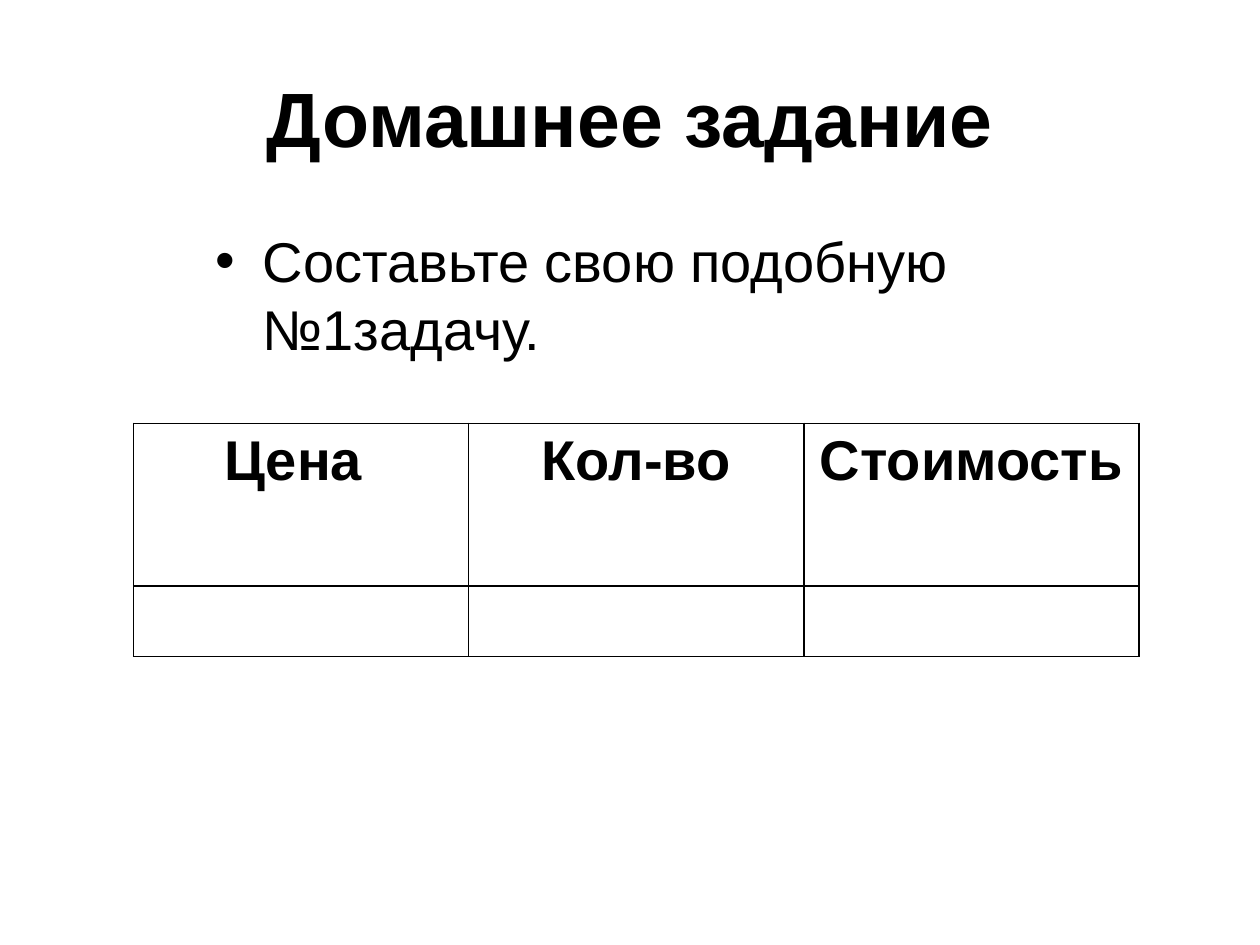
import pptx
import pptx.dml.color
import pptx.enum.text
import pptx.util
from lxml import etree
from pptx.oxml.ns import qn
from pptx.util import Inches

TITLE = "Домашнее задание"
TASK = "Составьте свою подобную №1задачу."
TABLE_ROWS = [("Цена ", "Кол-во", "Стоимость "), ("", "", "")]
ROW_HEIGHTS = (1.29, 0.56)
COLUMN_WIDTH = 2.66
TABLE_LEFT, TABLE_TOP = 1.06, 3.36
THEME = {
    "font": "Arial",
    "ink": "000000",
    "title_size": 44,
    "text_size": 32,
    "border_width": 1,
}
CENTER = pptx.enum.text.PP_ALIGN.CENTER


def place(shape, left, top, width, height):
    shape.left, shape.top = Inches(left), Inches(top)
    shape.width, shape.height = Inches(width), Inches(height)


def style(paragraph, size, bold=False, alignment=None):
    paragraph.alignment = alignment
    paragraph.font.name = THEME["font"]
    paragraph.font.size = pptx.util.Pt(size)
    paragraph.font.bold = bold
    paragraph.font.color.rgb = pptx.dml.color.RGBColor.from_string(THEME["ink"])


def fill_placeholder(shape, text, size, **formatting):
    frame = shape.text_frame
    frame.text = text
    frame.word_wrap = True
    frame.auto_size = pptx.enum.text.MSO_AUTO_SIZE.NONE
    style(frame.paragraphs[0], size, **formatting)


def add_borders(cell):
    properties = cell._tc.get_or_add_tcPr()
    width = str(pptx.util.Pt(THEME["border_width"]))
    for side in ("a:lnL", "a:lnR", "a:lnT", "a:lnB"):
        line = etree.SubElement(properties, qn(side), w=width)
        fill = etree.SubElement(line, qn("a:solidFill"))
        etree.SubElement(fill, qn("a:srgbClr"), val=THEME["ink"])


def add_price_table(slide):
    columns = len(TABLE_ROWS[0])
    table = slide.shapes.add_table(
        len(TABLE_ROWS), columns, Inches(TABLE_LEFT), Inches(TABLE_TOP),
        Inches(COLUMN_WIDTH * columns), Inches(sum(ROW_HEIGHTS))).table
    table.first_row = table.horz_banding = False
    for column in table.columns:
        column.width = Inches(COLUMN_WIDTH)
    for row, height, texts in zip(table.rows, ROW_HEIGHTS, TABLE_ROWS):
        row.height = Inches(height)
        for cell, text in zip(row.cells, texts):
            add_borders(cell)
            cell.fill.background()
            if text:
                cell.text = text
                style(cell.text_frame.paragraphs[0], THEME["text_size"],
                      bold=True, alignment=CENTER)


def main():
    presentation = pptx.Presentation()
    presentation.slide_width, presentation.slide_height = Inches(10), Inches(7.5)
    slide = presentation.slides.add_slide(presentation.slide_layouts[1])

    title = slide.shapes.title
    place(title, 0.5, 0.3, 9, 1.25)
    fill_placeholder(title, TITLE, THEME["title_size"], bold=True, alignment=CENTER)

    body = slide.placeholders[1]
    place(body, 1.61, 1.75, 7.89, 4.95)
    fill_placeholder(body, TASK, THEME["text_size"])
    body.text_frame.paragraphs[0].space_before = pptx.util.Pt(0)

    add_price_table(slide)
    presentation.save("out.pptx")


if __name__ == "__main__":
    main()
